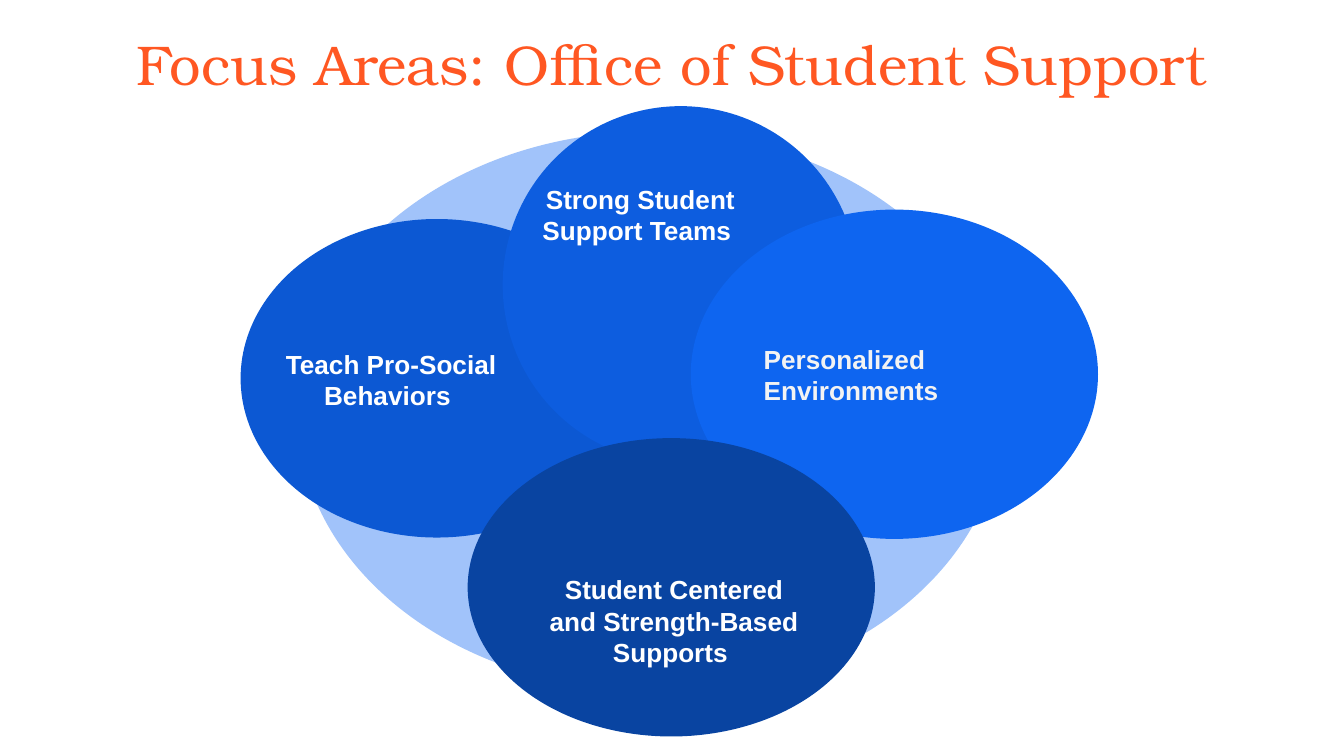
import pptx
import pptx.util
import pptx.dml.color
import pptx.enum.shapes
import pptx.enum.text

Inches = pptx.util.Inches
RGBColor = pptx.dml.color.RGBColor
MIDDLE = pptx.enum.text.MSO_ANCHOR.MIDDLE
TOP = pptx.enum.text.MSO_ANCHOR.TOP
CENTER = pptx.enum.text.PP_ALIGN.CENTER
LEFT = pptx.enum.text.PP_ALIGN.LEFT

ORANGE = RGBColor(0xFF, 0x57, 0x22)
WHITE = RGBColor(0xFF, 0xFF, 0xFF)
OFF_WHITE = RGBColor(0xF3, 0xF3, 0xF3)
PALE_BLUE = RGBColor(0xA1, 0xC3, 0xFA)
ROYAL_BLUE = RGBColor(0x0C, 0x58, 0xD3)
MID_BLUE = RGBColor(0x0D, 0x5D, 0xDF)
BRIGHT_BLUE = RGBColor(0x0E, 0x65, 0xF0)
NAVY = RGBColor(0x09, 0x44, 0xA1)

presentation = pptx.Presentation()
presentation.slide_width = Inches(10)
presentation.slide_height = Inches(10 * 9 / 16)
slide = presentation.slides.add_slide(presentation.slide_layouts[6])


def add_ellipse(box, color):
    ellipse = slide.shapes.add_shape(
        pptx.enum.shapes.MSO_SHAPE.OVAL, *[Inches(length) for length in box])
    ellipse.shadow.inherit = False
    ellipse.fill.solid()
    ellipse.fill.fore_color.rgb = color
    ellipse.line.fill.background()
    return ellipse


def write(holder, text, size, color, font="Arial", bold=True, align=CENTER, anchor=MIDDLE):
    frame = holder.text_frame
    frame.word_wrap = True
    frame.vertical_anchor = anchor
    frame.margin_left = frame.margin_right = Inches(0.1)
    frame.margin_top = frame.margin_bottom = Inches(0.1)
    paragraph = frame.paragraphs[0]
    paragraph.text = text
    paragraph.alignment = align
    paragraph.font.name = font
    paragraph.font.size = pptx.util.Pt(size)
    paragraph.font.bold = bold
    paragraph.font.color.rgb = color


title = slide.shapes.add_textbox(Inches(0.34), Inches(0.12), Inches(9.32), Inches(1.14))
write(title, "Focus Areas: Office of Student Support", 30, ORANGE,
      font="TeX Gyre Bonum", bold=False, anchor=TOP)

add_ellipse((2.21, 0.98, 5.26, 4.16), PALE_BLUE)

# Ellipse box, fill, label, label box (None: the label sits in the ellipse itself)
focus_areas = [
    ((1.79, 1.63, 2.92, 2.37), ROYAL_BLUE,
     "Teach Pro-Social Behaviors ", (1.9, 2.44, 2.02, 0.77)),
    ((3.74, 0.79, 2.65, 2.66), MID_BLUE,
     "Strong Student Support Teams ", (3.74, 1.13, 2.05, 0.93)),
    ((5.14, 1.56, 3.03, 2.45), BRIGHT_BLUE,
     "Personalized Environments", None),
    ((3.48, 3.26, 3.03, 2.22), NAVY,
     "Student Centered and Strength-Based Supports ", (3.97, 4.26, 2.09, 0.72)),
]
for area_box, fill, label, label_box in focus_areas:
    area = add_ellipse(area_box, fill)
    if label_box:
        caption = slide.shapes.add_textbox(*[Inches(length) for length in label_box])
        write(caption, label, 14, WHITE)
    else:
        write(area, label, 14, OFF_WHITE, align=LEFT)

presentation.save("out.pptx")
